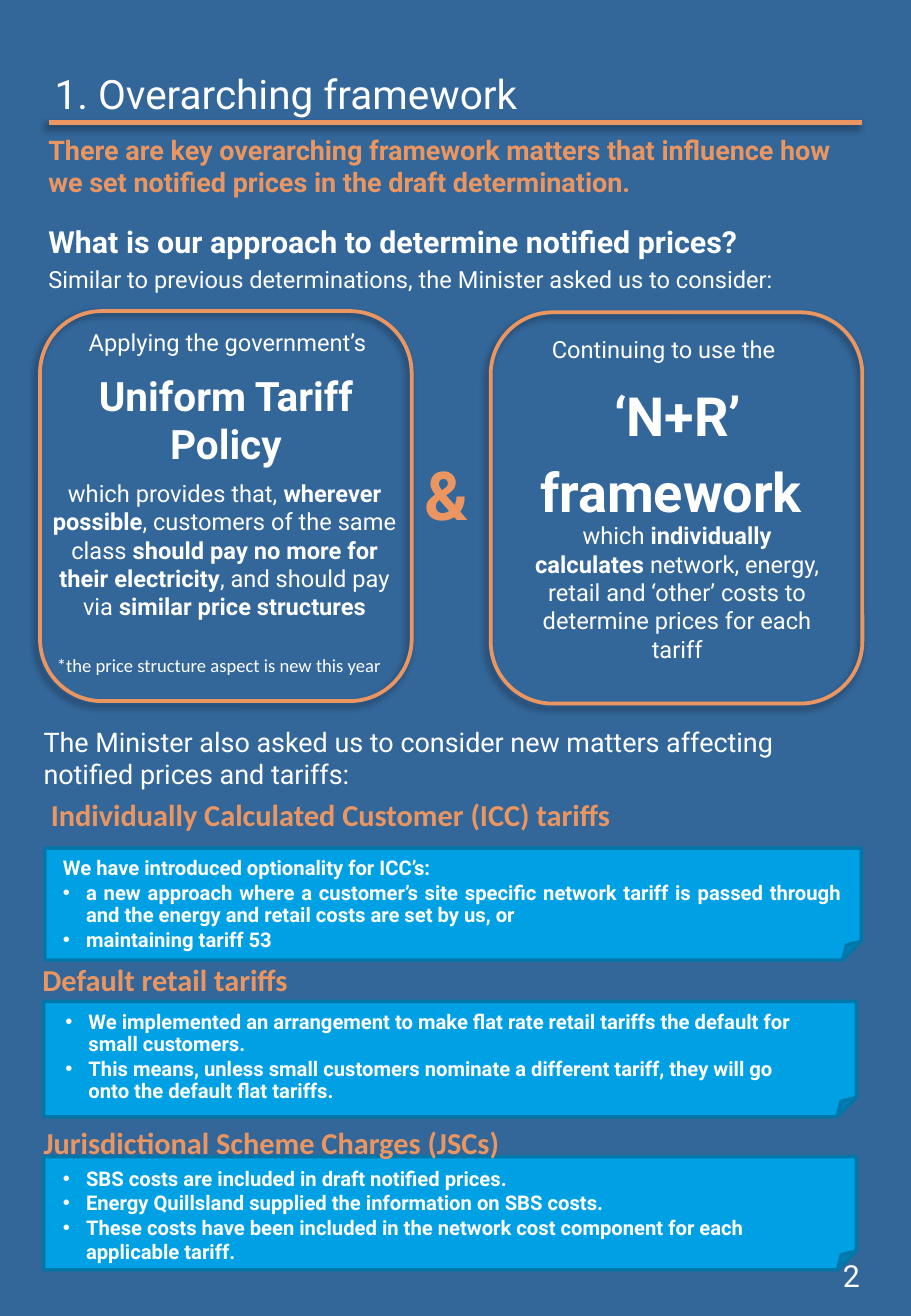
from lxml.etree import SubElement
from pptx import Presentation
from pptx.dml.color import RGBColor
from pptx.enum.shapes import MSO_CONNECTOR, MSO_SHAPE
from pptx.enum.text import PP_ALIGN
from pptx.oxml.ns import qn
from pptx.util import Inches, Pt

COLORS = {"back": "336699", "white": "FFFFFF", "accent": "EB9661",
          "note": "00A1E4", "edge": "0077A9"}
CENTER, FULL = PP_ALIGN.CENTER, PP_ALIGN.JUSTIFY


def color(name):
    return RGBColor.from_string(COLORS[name])


class Page:
    """Holds the style and the current slide."""

    def __init__(self, deck):
        self.slide = deck.slides.add_slide(deck.slide_layouts[6])
        self.shapes = self.slide.shapes
        fill = self.slide.background.fill
        fill.solid()
        fill.fore_color.rgb = color("back")

    def frame(self, box, inset=True):
        text = self.shapes.add_textbox(*map(Inches, box)).text_frame
        text.word_wrap = True
        if not inset:
            for side in ("left", "right", "top", "bottom"):
                setattr(text, f"margin_{side}", 0)
        return text

    def runs(self, para, text, size, tint="white", bold=False, font="Roboto"):
        """Write text; each bar switches bold on or off."""
        for i, part in enumerate(text.split("|")):
            if part:
                run = para.add_run()
                run.text = part
                look = {"size": Pt(size), "name": font, "bold": bold ^ (i % 2 == 1)}
                for key, value in look.items():
                    setattr(run.font, key, value)
                run.font.color.rgb = color(tint)

    def text(self, box, text, size, inset=True, form=None, **look):
        para = self.frame(box, inset).paragraphs[0]
        for key, value in (form or {}).items():
            setattr(para, key, value)
        self.runs(para, text, size, **look)
        return para

    def indent(self, para, left, first=0):
        props = para._p.get_or_add_pPr()
        props.set("marL", str(Inches(left)))
        props.set("indent", str(Inches(first)))
        return props

    def list(self, box, items, form, lead=None):
        frame = self.frame(box)
        lines = ([lead] if lead else []) + items
        for i, line in enumerate(lines):
            para = frame.add_paragraph() if i else frame.paragraphs[0]
            if line != lead:
                props = self.indent(para, 0.19, -0.19)
                SubElement(props, qn("a:buFont"), typeface="Arial")
                SubElement(props, qn("a:buChar"), char="•")
            for key, value in form.items():
                setattr(para, key, value)
            if lead and i < len(lines) - 1:
                para.alignment = FULL
            self.runs(para, line, 12, bold=True)

    def shade(self, effects):
        drop = SubElement(effects, qn("a:outerShdw"), blurRad=str(Pt(4)),
                          dist=str(Pt(3)), dir="8100000", algn="tr", rotWithShape="0")
        black = SubElement(drop, qn("a:srgbClr"), val="000000")
        SubElement(black, qn("a:alpha"), val="40000")

    def rule(self, left, right, top):
        line = self.shapes.add_connector(
            MSO_CONNECTOR.STRAIGHT, *map(Inches, (left, top, right, top)))
        line.line.color.rgb = color("accent")
        line.line.width = Pt(3)
        self.shade(SubElement(line._element.spPr, qn("a:effectLst")))

    def shape(self, kind, box, edge, width, fill=None):
        shape = self.shapes.add_shape(kind, *map(Inches, box))
        shape.shadow.inherit = False
        shape.line.color.rgb = color(edge)
        shape.line.width = Pt(width)
        if fill:
            shape.fill.solid()
            shape.fill.fore_color.rgb = color(fill)
        else:
            shape.fill.background()
            self.shade(shape._element.spPr.find(qn("a:effectLst")))

    def card(self, box):
        self.shape(MSO_SHAPE.ROUNDED_RECTANGLE, box, "accent", 2.25)

    def note(self, box):
        self.shape(MSO_SHAPE.FOLDED_CORNER, box, "edge", 2, "note")

    def head(self, left, top, text):
        self.text((left, top, 5.31, 0.4), text, 18, tint="accent", bold=True,
                  font="Calibri")


def main():
    deck = Presentation()
    deck.slide_width, deck.slide_height = Inches(7.5), Inches(10.83)
    page = Page(deck)
    mid = {"alignment": CENTER}

    # Title and lead
    title = page.text((0.25, 0.53, 6.5, 0.66), "1. Overarching framework", 24,
                      inset=False, form={"line_spacing": 1.1})
    page.indent(title, 0.2)
    page.rule(0.4, 7.1, 1.01)
    page.text((0.3, 1.05, 6.73, 0.64),
              "There are key overarching framework matters that influence how "
              "we set notified prices in the draft determination.",
              16, tint="accent", bold=True)
    page.text((0.3, 1.79, 6.99, 0.4),
              "What is our approach to determine notified prices?", 18, bold=True)
    page.text((0.3, 2.13, 6.59, 0.34),
              "Similar to previous determinations, the Minister asked us to consider:", 14)

    # Uniform tariff card
    page.card((0.33, 2.56, 3.06, 3.21))
    page.text((0.73, 2.7, 2.52, 0.24), "Applying the government’s", 14, inset=False)
    page.text((0.41, 3.05, 2.9, 0.45), "Uniform Tariff Policy", 24, inset=False,
              form=mid, bold=True)
    page.text((0.43, 3.94, 2.84, 1.56),
              "which provides that, |wherever possible|, customers of the same class "
              "|should pay no more for their electricity|, and should pay via "
              "|similar price structures", 14, inset=False, form=mid)
    page.text((0.37, 5.33, 3, 0.29), "*the price structure aspect is new this year",
              11, font="Calibri")

    page.text((3.4, 3.68, 0.32, 0.77), "&", 40, tint="accent", bold=True)

    # Framework card
    page.card((4.04, 2.57, 3.06, 3.22))
    frame = page.frame((4.03, 2.38, 2.99, 1.94))
    first, second = frame.paragraphs[0], frame.add_paragraph()
    for para in (first, second):
        para.alignment, para.line_spacing = CENTER, Pt(45)
    page.runs(first, "Continuing to use the", 14)
    page.runs(first, " ", 36)
    page.runs(second, " ‘N+R’ framework", 32, bold=True)
    page.text((4.27, 4.24, 2.61, 1.4),
              "which |individually calculates |network, energy, retail and ‘other’ "
              "costs to determine prices for each tariff", 14, form=mid)

    # New matters
    page.text((0.26, 5.92, 6.99, 0.64),
              "The Minister also asked us to consider new matters affecting "
              "notified prices and tariffs:", 16)
    tight = {"line_spacing": 0.9, "space_after": Pt(2)}

    page.note((0.37, 6.98, 6.72, 0.92))
    page.head(0.32, 6.5, "Individually Calculated Customer (ICC) tariffs")
    page.list((0.42, 7.01, 6.61, 0.89), [
        "a new approach where a customer’s site specific network tariff is passed "
        "through and the energy and retail costs are set by us, or",
        "maintaining tariff 53"], tight, "We have introduced optionality for ICC’s:")

    page.note((0.36, 8.24, 6.69, 0.95))
    page.head(0.25, 7.86, "Default retail tariffs")
    page.list((0.44, 8.28, 6.36, 0.86), [
        "We implemented an arrangement to make flat rate retail tariffs the default "
        "for small customers.",
        "This means, unless small customers nominate a different tariff, they will "
        "go onto the default flat tariffs."], tight)

    page.note((0.36, 9.52, 6.69, 0.93))
    page.head(0.26, 9.2, "Jurisdictional Scheme Charges (JSCs)")
    page.list((0.42, 9.55, 6.34, 0.91), [
        "SBS costs are included in draft notified prices.",
        "Energy Quillsland supplied the information on SBS costs.",
        "These costs have been included in the network cost component for each "
        "applicable tariff."], {})

    # Page number
    page.text((6.84, 10.3, 0.41, 0.4), "2", 18)
    deck.save("out.pptx")


if __name__ == "__main__":
    main()
